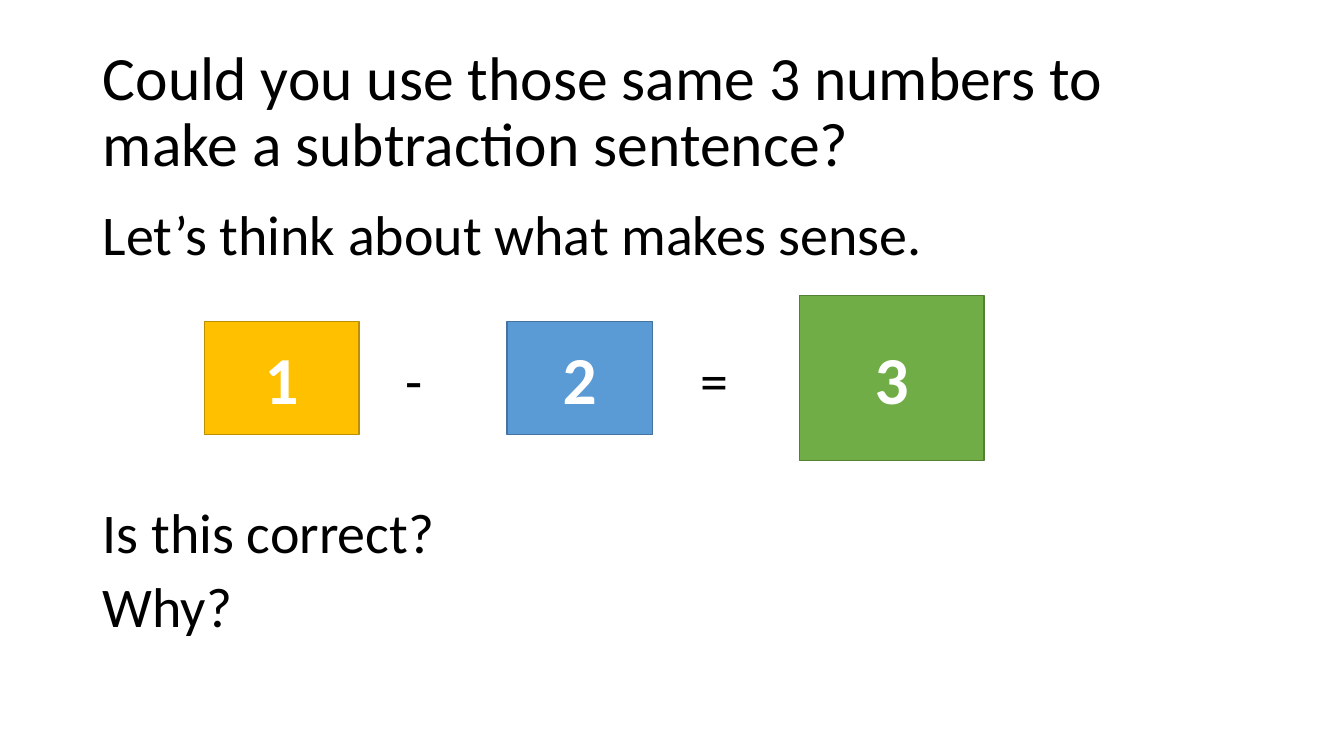
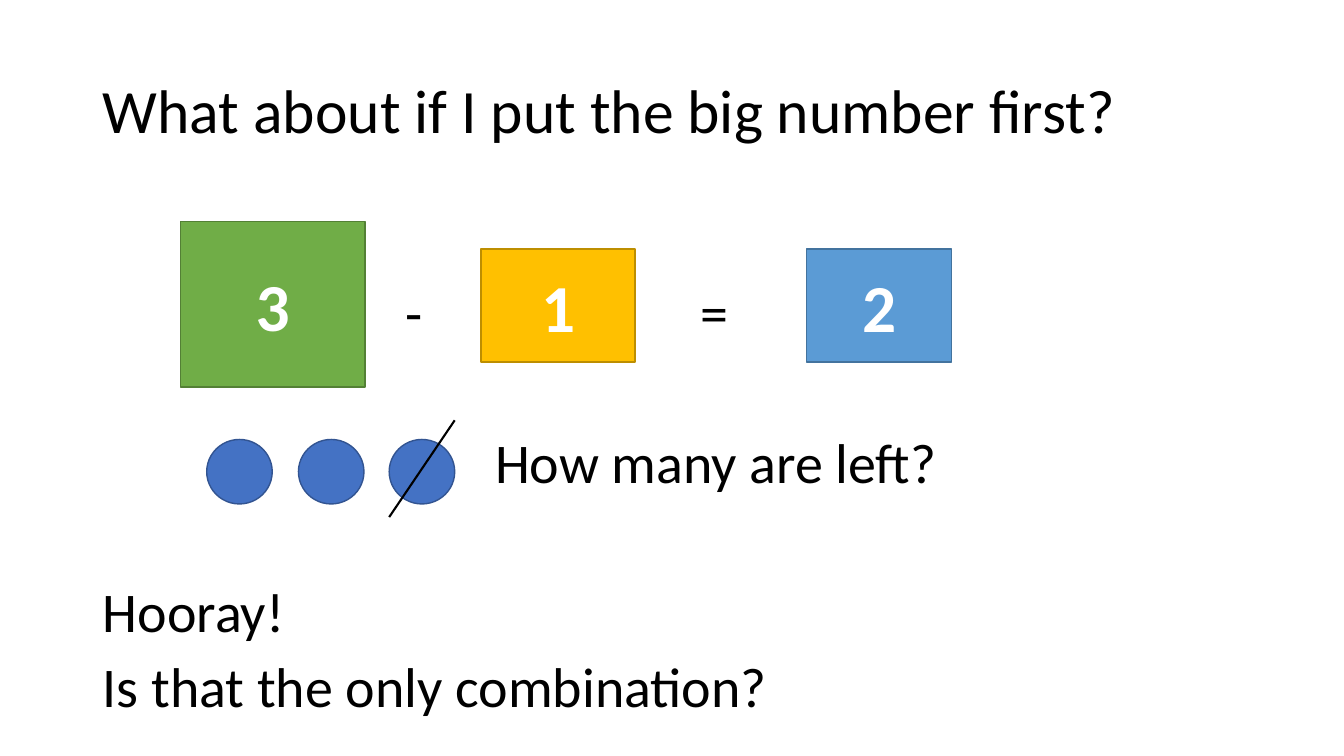
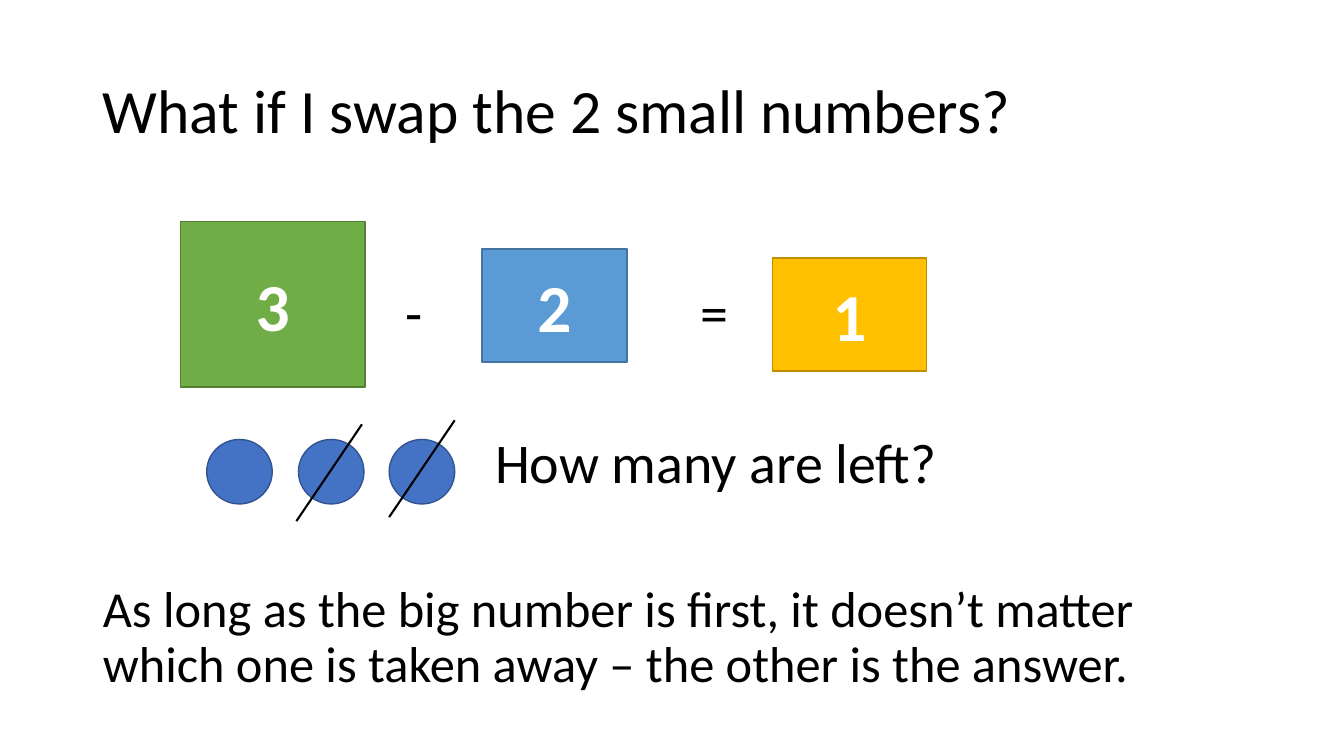
import pptx
import pptx.util
import pptx.dml.color
import pptx.enum.shapes
import pptx.enum.text
import pptx.oxml.ns
import lxml.etree
from pptx.util import Inches

COLOURS = {
    "text": "000000",
    "number": "FFFFFF",
    "yellow": "FFC000",
    "yellow line": "BD8E00",
    "blue": "5B9BD5",
    "blue line": "43739E",
    "green": "70AD47",
    "green line": "538035",
    "counter": "4472C4",
    "counter line": "325491",
}
TILES = {
    "1": ("yellow", 1.53, 1.12),
    "2": ("blue", 1.44, 1.12),
    "3": ("green", 1.83, 1.64),
}
OPERATORS = (("-", 3.92), ("=", 6.85))
QUESTION_INDENT = 3.89
COUNTER_LEFTS = (2.05, 2.96, 3.86)
LINE_GAP = 10
SECTION_GAP = 63
EQUATION_GAP = 170


def colour(name):
    return pptx.dml.color.RGBColor.from_string(COLOURS[name])


def add_element(parent, tag):
    return lxml.etree.SubElement(parent, pptx.oxml.ns.qn(tag))


class Deck:
    font_name = "Calibri"

    def __init__(self):
        self.presentation = pptx.Presentation()
        self.presentation.slide_width = Inches(13.33)
        self.presentation.slide_height = Inches(7.5)
        self.slide = None

    def style_font(self, paragraph, size, name="text", bold=False):
        paragraph.font.name = self.font_name
        paragraph.font.size = pptx.util.Pt(size)
        paragraph.font.bold = bold
        paragraph.font.color.rgb = colour(name)

    def place(self, placeholder, top, height, anchor):
        placeholder.left, placeholder.top = Inches(0.92), Inches(top)
        placeholder.width, placeholder.height = Inches(11.5), Inches(height)
        frame = placeholder.text_frame
        frame.word_wrap = True
        frame.auto_size = pptx.enum.text.MSO_AUTO_SIZE.NONE
        frame.vertical_anchor = anchor
        return frame

    def add_slide(self, title):
        layout = self.presentation.slide_layouts[1]
        self.slide = self.presentation.slides.add_slide(layout)
        frame = self.place(self.slide.shapes.title, 0.4, 1.45,
                           pptx.enum.text.MSO_ANCHOR.MIDDLE)
        frame.text = title
        paragraph = frame.paragraphs[0]
        paragraph.alignment = pptx.enum.text.PP_ALIGN.LEFT
        paragraph.line_spacing = 0.9
        self.style_font(paragraph, 44)

    def add_body(self, top, lines):
        frame = self.place(self.slide.placeholders[1], top, 7.28 - top,
                           pptx.enum.text.MSO_ANCHOR.TOP)
        frame.text = "\n".join(text for text, indent, gap, size in lines)
        for paragraph, (text, indent, gap, size) in zip(frame.paragraphs, lines):
            paragraph.line_spacing = 0.9
            paragraph.space_before = pptx.util.Pt(gap)
            properties = paragraph._p.get_or_add_pPr()
            properties.set("marL", str(Inches(indent)))
            properties.set("indent", "0")
            add_element(properties, "a:buNone")
            self.style_font(paragraph, size)

    def add_operators(self, top):
        for sign, left in OPERATORS:
            box = self.slide.shapes.add_textbox(
                Inches(left), Inches(top), Inches(0.6), Inches(0.7))
            frame = box.text_frame
            frame.word_wrap = True
            frame.text = sign
            frame.paragraphs[0].line_spacing = 0.9
            self.style_font(frame.paragraphs[0], 40)

    def add_outlined(self, kind, left, top, width, height, name):
        shape = self.slide.shapes.add_shape(
            kind, Inches(left), Inches(top), Inches(width), Inches(height))
        shape.shadow.inherit = False
        shape.fill.solid()
        shape.fill.fore_color.rgb = colour(name)
        shape.line.color.rgb = colour(name + " line")
        shape.line.width = pptx.util.Pt(1)
        return shape

    def add_tile(self, number, left, middle):
        name, width, height = TILES[number]
        shape = self.add_outlined(pptx.enum.shapes.MSO_SHAPE.RECTANGLE, left,
                                  middle - height / 2, width, height, name)
        frame = shape.text_frame
        frame.text = number
        frame.vertical_anchor = pptx.enum.text.MSO_ANCHOR.MIDDLE
        frame.paragraphs[0].alignment = pptx.enum.text.PP_ALIGN.CENTER
        self.style_font(frame.paragraphs[0], 48, "number", True)

    def add_equation(self, operator_top, tiles):
        self.add_operators(operator_top)
        for tile in tiles:
            self.add_tile(*tile)

    def add_counters(self):
        for left in COUNTER_LEFTS:
            self.add_outlined(pptx.enum.shapes.MSO_SHAPE.OVAL,
                              left, 4.36, 0.65, 0.64, "counter")

    def add_strike(self, left, top):
        line = self.slide.shapes.add_connector(
            pptx.enum.shapes.MSO_CONNECTOR.STRAIGHT, Inches(left + 0.65),
            Inches(top), Inches(left), Inches(top + 0.96))
        line.line.color.rgb = colour("text")
        line.line.width = pptx.util.Pt(1.5)
        add_element(line._element.spPr, "a:effectLst")

    def add_subtraction(self, title, tiles, strikes, closing):
        self.add_slide(title)
        self.add_body(4.27, [
            ("How many are left?", QUESTION_INDENT, 0, 40),
            *closing,
        ])
        self.add_equation(2.78, tiles)
        self.add_counters()
        for strike in strikes:
            self.add_strike(*strike)


def main():
    deck = Deck()

    deck.add_slide("Could you use those same 3 numbers to make a subtraction sentence?")
    deck.add_body(2, [
        ("Let’s think about what makes sense.", 0, 0, 40),
        ("Is this correct?", 0, EQUATION_GAP, 40),
        ("Why?", 0, LINE_GAP, 40),
    ])
    deck.add_equation(3.45, [("1", 2.03, 3.75), ("2", 5.03, 3.75), ("3", 7.93, 3.75)])

    deck.add_subtraction(
        "What about if I put the big number first?",
        [("1", 4.77, 3.03), ("2", 8, 3.03), ("3", 1.79, 3.02)],
        [(3.86, 4.17)],
        [("Hooray!", 0, SECTION_GAP, 40),
         ("Is that the only combination?", 0, LINE_GAP, 40)])

    deck.add_subtraction(
        "What if I swap the 2 small numbers?",
        [("1", 7.66, 3.12), ("2", 4.78, 3.03), ("3", 1.79, 3.02)],
        [(3.86, 4.17), (2.94, 4.21)],
        [("As long as the big number is first, it doesn’t matter which one "
          "is taken away – the other is the answer.", 0, SECTION_GAP, 36)])

    deck.presentation.save("out.pptx")


if __name__ == "__main__":
    main()
